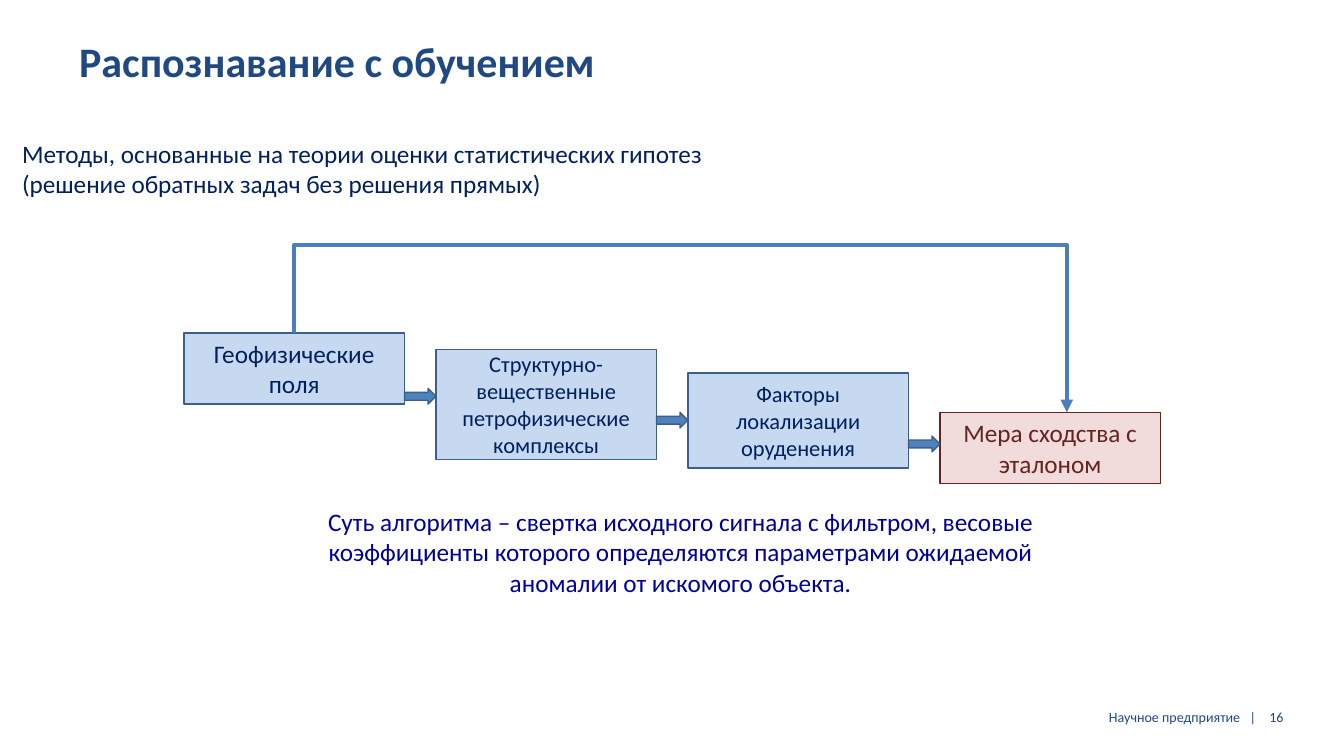
from dataclasses import dataclass

from lxml.etree import SubElement
from pptx import Presentation
from pptx.dml.color import RGBColor
from pptx.enum.shapes import MSO_CONNECTOR, MSO_SHAPE
from pptx.enum.text import MSO_ANCHOR, PP_ALIGN
from pptx.oxml.ns import qn
from pptx.util import Cm, Pt

FONT = "Calibri"
WHITE = RGBColor(0xFF, 0xFF, 0xFF)
TITLE_BLUE = RGBColor(0x20, 0x49, 0x82)
NAVY = RGBColor(0x00, 0x20, 0x60)
INDIGO = RGBColor(0x00, 0x00, 0x99)
PALE_BLUE = RGBColor(0xC6, 0xD9, 0xF1)
EDGE_BLUE = RGBColor(0x3A, 0x5F, 0x8C)
ARROW_BLUE = RGBColor(0x4F, 0x81, 0xBD)
LINK_BLUE = RGBColor(0x4B, 0x7E, 0xBC)
PALE_RED = RGBColor(0xF2, 0xDC, 0xDB)
DARK_RED = RGBColor(0x63, 0x25, 0x23)

BOX_LEFT, BOX_STEP, BOX_WIDTH = 9.27, 12.7, 11.12
ARROW_TOP, ARROW_DROP, ARROW_HEIGHT = 19.58, 1.2, 0.79
WIDE_INSETS = (0.61, 0.3)
NARROW_INSETS = (0.25, 0.13)


@dataclass
class Label:
    text: str
    left: float
    top: float
    width: float
    height: float
    size: int
    color: RGBColor
    bold: bool = False
    align: PP_ALIGN = PP_ALIGN.LEFT
    anchor: MSO_ANCHOR = MSO_ANCHOR.MIDDLE
    insets: tuple[float, float] = WIDE_INSETS


@dataclass
class Stage:
    text: str
    top: float
    height: float
    size: int
    fill: RGBColor = PALE_BLUE
    edge: RGBColor = EDGE_BLUE
    color: RGBColor = NAVY


LABELS = [
    Label("Распознавание с обучением", 3.38, 1.27, 46.15, 3.56, 60, TITLE_BLUE, bold=True),
    Label("Научное предприятие   |", 49.12, 35.23, 14.81, 1.83, 20, TITLE_BLUE,
          align=PP_ALIGN.RIGHT),
    Label("16", 63.37, 35.23, 4.37, 1.83, 20, TITLE_BLUE),
    Label("Методы, основанные на теории оценки статистических гипотез "
          "(решение обратных задач без решения прямых)",
          0.86, 6.83, 35.76, 3.33, 36, NAVY, anchor=MSO_ANCHOR.TOP, insets=NARROW_INSETS),
    Label("Суть алгоритма – свертка исходного сигнала с фильтром, весовые коэффициенты "
          "которого определяются параметрами ожидаемой аномалии от искомого объекта.",
          14.83, 25.4, 38.94, 4.88, 36, INDIGO, align=PP_ALIGN.CENTER,
          anchor=MSO_ANCHOR.TOP, insets=NARROW_INSETS),
]

STAGES = [
    Stage("Геофизические поля", 16.79, 3.58, 36),
    Stage("Структурно-вещественные петрофизические комплексы", 17.6, 5.56, 32),
    Stage("Факторы локализации оруденения", 18.8, 4.78, 32),
    Stage("Мера сходства с эталоном", 20.78, 3.58, 36, PALE_RED, DARK_RED, DARK_RED),
]


def write(sp, text: str, size: int, color: RGBColor, bold: bool, align: PP_ALIGN,
          anchor: MSO_ANCHOR, insets: tuple[float, float]) -> None:
    tf = sp.text_frame
    side, end = (Cm(v) for v in insets)
    frame_format = dict(word_wrap=True, vertical_anchor=anchor, margin_left=side,
                        margin_right=side, margin_top=end, margin_bottom=end)
    for name, value in frame_format.items():
        setattr(tf, name, value)
    p = tf.paragraphs[0]
    p.alignment = align
    r = p.add_run()
    r.text = text
    for name, value in dict(name=FONT, size=Pt(size), bold=bold).items():
        setattr(r.font, name, value)
    r.font.color.rgb = color


def add_label(s, label: Label) -> None:
    sp = s.shapes.add_textbox(Cm(label.left), Cm(label.top), Cm(label.width), Cm(label.height))
    write(sp, label.text, label.size, label.color, label.bold, label.align,
          label.anchor, label.insets)


def add_block(s, kind: MSO_SHAPE, left: float, top: float, width: float, height: float,
              fill: RGBColor, edge: RGBColor):
    sp = s.shapes.add_shape(kind, Cm(left), Cm(top), Cm(width), Cm(height))
    sp.shadow.inherit = False
    sp.fill.solid()
    sp.fill.fore_color.rgb = fill
    sp.line.color.rgb = edge
    sp.line.width = Pt(2)
    return sp


def add_bypass(s, start: tuple[float, float], end: tuple[float, float],
               rise: float, reach: float) -> None:
    """Elbow arrow that climbs from start, crosses and drops to end.

    The four-part elbow is laid out sideways and turned by 270 degrees;
    rise and reach are its bends as shares of its height and width.
    """
    mid_x, mid_y = (start[0] + end[0]) / 2, (start[1] + end[1]) / 2
    half_w, half_h = (end[1] - start[1]) / 2, (end[0] - start[0]) / 2
    sp = s.shapes.add_connector(MSO_CONNECTOR.ELBOW, Cm(mid_x + half_w), Cm(mid_y - half_h),
                                Cm(mid_x - half_w), Cm(mid_y + half_h))
    sp.line.color.rgb = LINK_BLUE
    sp.line.width = Pt(6)
    props = sp._element.spPr
    props.find(qn("a:xfrm")).set("rot", "16200000")
    geometry = props.find(qn("a:prstGeom"))
    geometry.set("prst", "bentConnector4")
    guides = geometry.find(qn("a:avLst"))
    if guides is None:
        guides = SubElement(geometry, qn("a:avLst"))
    for name, share in (("adj1", rise), ("adj2", reach)):
        SubElement(guides, qn("a:gd"), name=name, fmla=f"val {round(share * 100000)}")
    SubElement(props.find(qn("a:ln")), qn("a:tailEnd"), type="triangle")
    SubElement(props, qn("a:effectLst"))


def main() -> None:
    prs = Presentation()
    prs.slide_width, prs.slide_height = Cm(67.74), Cm(38.1)
    s = prs.slides.add_slide(prs.slide_layouts[6])
    s.background.fill.solid()
    s.background.fill.fore_color.rgb = WHITE

    for label in LABELS:
        add_label(s, label)

    for i, stage in enumerate(STAGES):
        left = BOX_LEFT + i * BOX_STEP
        sp = add_block(s, MSO_SHAPE.RECTANGLE, left, stage.top, BOX_WIDTH, stage.height,
                       stage.fill, stage.edge)
        write(sp, stage.text, stage.size, stage.color, False, PP_ALIGN.CENTER,
              MSO_ANCHOR.MIDDLE, NARROW_INSETS)

    for i in range(len(STAGES) - 1):
        add_block(s, MSO_SHAPE.RIGHT_ARROW, BOX_LEFT + i * BOX_STEP + BOX_WIDTH,
                  ARROW_TOP + i * ARROW_DROP, BOX_STEP - BOX_WIDTH, ARROW_HEIGHT,
                  ARROW_BLUE, EDGE_BLUE)

    first, last = STAGES[0], STAGES[-1]
    add_bypass(s, (BOX_LEFT + BOX_WIDTH / 2, first.top), (53.77, last.top), -1.11, 1)
    prs.save("out.pptx")


if __name__ == "__main__":
    main()
